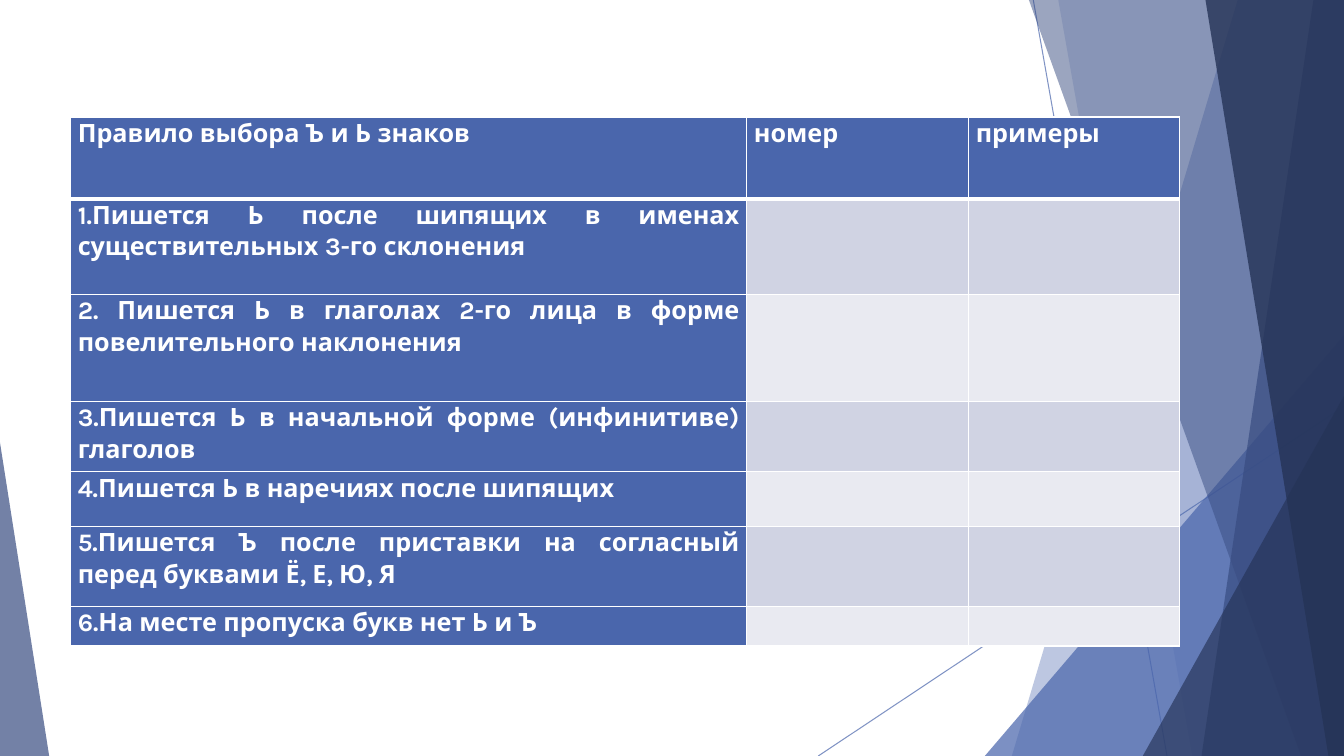
from lxml.etree import SubElement
from pptx import Presentation
from pptx.dml.color import RGBColor
from pptx.enum.shapes import MSO_CONNECTOR, MSO_SHAPE
from pptx.enum.text import PP_ALIGN
from pptx.oxml.ns import qn
from pptx.util import Cm, Pt

BLUE = RGBColor(0x4A, 0x66, 0xAC)
DARK_BLUE = RGBColor(0x38, 0x4C, 0x81)
NAVY = RGBColor(0x25, 0x33, 0x56)
WHITE = RGBColor(0xFF, 0xFF, 0xFF)
BANDS = [RGBColor(0xE9, 0xEA, 0xF1), RGBColor(0xD0, 0xD3, 0xE3)]
WIDTH, HEIGHT = 33.87, 19.05


def set_opacity(shape, percent):
    for color in shape._element.spPr.iter(qn("a:srgbClr")):
        SubElement(color, qn("a:alpha"), val=str(percent * 1000))


def write_text(cell, text, size=18, font="Karla", color=WHITE, bold=True):
    paragraph = cell.text_frame.paragraphs[0]
    paragraph.alignment = PP_ALIGN.JUSTIFY
    paragraph.line_spacing = 1.07
    paragraph.font.size = Pt(size)
    if text:
        run = paragraph.add_run()
        run.text = text
        run.font.size = Pt(size)
        run.font.name = font
        run.font.bold = bold
        run.font.color.rgb = color


presentation = Presentation()
presentation.slide_width = Cm(WIDTH)
presentation.slide_height = Cm(HEIGHT)
slide = presentation.slides.add_slide(presentation.slide_layouts[6])

# Thin crossing lines
for x1, y1, x2, y2 in [(26.04, 0, 29.41, HEIGHT), (WIDTH, 10.24, 20.62, HEIGHT)]:
    line = slide.shapes.add_connector(
        MSO_CONNECTOR.STRAIGHT, Cm(x1), Cm(y1), Cm(x2), Cm(y2))
    line.line.color.rgb = BLUE
    line.line.width = Pt(0.75)
    set_opacity(line, 70)
    SubElement(line._element.spPr, qn("a:effectLst"))

# Translucent facets, back to front: a band runs from its top and bottom x to
# the right edge, a triangle stands on the bottom edge
facets = [
    ("band", (31.19, 25.5), BLUE, 36),
    ("band", (26.67, 30.05), BLUE, 20),
    ("triangle", (24.82, 8.46, 9.05, 1), BLUE, 72),
    ("band", (25.93, 32.79), DARK_BLUE, 50),
    ("band", (33.1, 30.28), DARK_BLUE, 70),
    ("band", (30.38, 33.48), NAVY, 80),
    ("triangle", (28.8, 9.98, 5.07, 1), NAVY, 66),
    ("triangle", (0, 11.15, 1.24, 0), DARK_BLUE, 70),
]
for kind, geometry, color, opacity in facets:
    if kind == "band":
        top_x, bottom_x = geometry
        builder = slide.shapes.build_freeform(Cm(top_x), 0, scale=1.0)
        builder.add_line_segments([
            (Cm(WIDTH), 0), (Cm(WIDTH), Cm(HEIGHT)), (Cm(bottom_x), Cm(HEIGHT))])
        facet = builder.convert_to_shape()
    else:
        left, top, width, apex = geometry
        facet = slide.shapes.add_shape(
            MSO_SHAPE.ISOSCELES_TRIANGLE,
            Cm(left), Cm(top), Cm(width), Cm(HEIGHT - top))
        facet.adjustments[0] = apex
    facet.shadow.inherit = False
    facet.fill.solid()
    facet.fill.fore_color.rgb = color
    facet.line.fill.background()
    set_opacity(facet, opacity)

# Table of spelling rules
rows = [
    ("Правило выбора Ъ и Ь знаков", "номер", "примеры"),
    ("1.Пишется Ь после шипящих в именах существительных 3-го склонения", "", ""),
    ("2. Пишется Ь в глаголах 2-го лица в форме повелительного наклонения", "", ""),
    ("3.Пишется Ь в начальной форме (инфинитиве) глаголов", "", ""),
    ("4.Пишется Ь в наречиях после шипящих", "", ""),
    ("5.Пишется Ъ после приставки на согласный перед буквами Ё, Е, Ю, Я", "", ""),
    ("6.На месте пропуска букв нет Ь и Ъ", "", ""),
]
column_widths = [17.04, 5.59, 5.31]
row_heights = [2.06, 2.41, 2.69, 1.78, 1.37, 2.03, 0.99]
table = slide.shapes.add_table(
    len(rows), len(column_widths), Cm(1.78), Cm(2.95),
    Cm(sum(column_widths)), Cm(sum(row_heights))).table
for column, width in zip(table.columns, column_widths):
    column.width = Cm(width)
for row, height in zip(table.rows, row_heights):
    row.height = Cm(height)

for row_index, texts in enumerate(rows):
    for column_index, text in enumerate(texts):
        cell = table.cell(row_index, column_index)
        cell.margin_left = cell.margin_right = Cm(0.18)
        cell.margin_top = cell.margin_bottom = 0
        write_text(cell, text)

        # White borders, thicker under the header
        for side in ("L", "R", "T", "B"):
            under_header = (row_index, side) in [(0, "B"), (1, "T")]
            border = SubElement(cell._tc.get_or_add_tcPr(), qn(f"a:ln{side}"),
                                w=str(Pt(3 if under_header else 1)))
            border_fill = SubElement(border, qn("a:solidFill"))
            SubElement(border_fill, qn("a:srgbClr"), val=str(WHITE))

        is_heading = row_index == 0 or column_index == 0
        cell.fill.solid()
        cell.fill.fore_color.rgb = BLUE if is_heading else BANDS[row_index % 2]

presentation.save("out.pptx")
